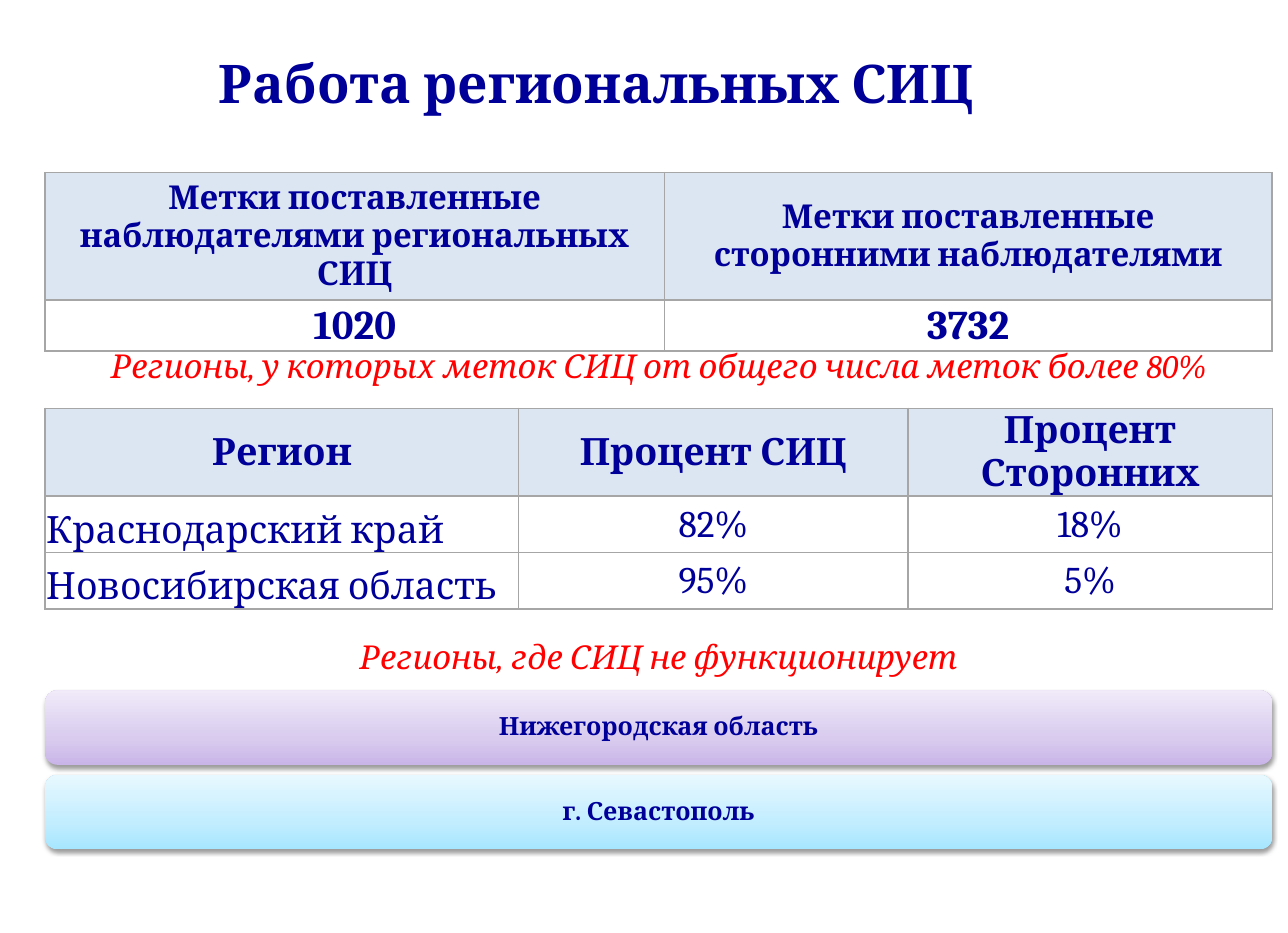
from lxml import etree
from pptx import Presentation
from pptx import util as u
from pptx.dml.color import RGBColor
from pptx.enum import shapes, text
from pptx.oxml import parse_xml
from pptx.oxml.ns import qn

COLORS = {"navy": "000099", "red": "FF0000", "header": "DCE6F2", "border": "A6A6A6"}
NS = 'xmlns:a="http://schemas.openxmlformats.org/drawingml/2006/main"'
LEFT, WIDTH = 0.4, 10.88
CENTER, MIDDLE = text.PP_ALIGN.CENTER, text.MSO_ANCHOR.MIDDLE


def add_text(tf, content, size, color="navy", bold=False, italic=False, align=CENTER):
    p = tf.paragraphs[0]
    p.alignment = align
    r = p.add_run()
    r.text = content
    r.font.size = u.Pt(size)
    r.font.name = "Cambria"
    r.font.bold = bold
    r.font.italic = italic
    r.font.color.rgb = RGBColor.from_string(COLORS[color])
    return r


def add_shadow(effects, blur, dist, angle, alpha):
    """Append an outer black shadow; blur and dist in points, angle in degrees."""
    effects.append(parse_xml(
        f'<a:outerShdw {NS} blurRad="{u.Pt(blur)}" dist="{u.Pt(dist)}" '
        f'dir="{angle * 60000}" algn="tl" rotWithShape="0"><a:srgbClr val="000000">'
        f'<a:alpha val="{alpha * 1000}"/></a:srgbClr></a:outerShdw>'))


prs = Presentation()
prs.slide_width, prs.slide_height = u.Inches(11.42), u.Inches(8.27)
slide = prs.slides.add_slide(prs.slide_layouts[5])

# Title
title = slide.shapes.title
title.left, title.top = u.Inches(1.84), u.Inches(0.4)
title.width, title.height = u.Inches(8.91), u.Inches(0.66)
title.text_frame.auto_size = text.MSO_AUTO_SIZE.NONE
title.text_frame.vertical_anchor = MIDDLE
r = add_text(title.text_frame, "Работа региональных СИЦ", 34, bold=True,
             align=text.PP_ALIGN.LEFT)
effects = etree.Element(qn("a:effectLst"))
add_shadow(effects, 3, 3, 45, 43)
r.font._element.find(qn("a:solidFill")).addnext(effects)

# Tables: top, column widths, row heights, header size, body size, header inset, rows
tables = [
    (1.53, [5.49, 5.39], [0.81, 0.45], 21, 26, (0.11, 0.06), [
        ["Метки поставленные наблюдателями региональных СИЦ",
         "Метки поставленные сторонними наблюдателями"],
        ["1020", "3732"]]),
    (3.62, [4.2, 3.45, 3.23], [0.75, 0.5, 0.5], 24, 24, (0.01, 0.01), [
        ["Регион", "Процент СИЦ", "Процент Сторонних"],
        ["Краснодарский край", "82%", "18%"],
        ["Новосибирская область", "95%", "5%"]]),
]
for top, widths, heights, head_size, body_size, head_inset, rows in tables:
    table = slide.shapes.add_table(
        len(rows), len(widths), u.Inches(LEFT), u.Inches(top),
        u.Inches(WIDTH), u.Inches(sum(heights))).table
    table.horz_banding = False
    for column, width in zip(table.columns, widths):
        column.width = u.Inches(width)
    for i, (row, values) in enumerate(zip(table.rows, rows)):
        row.height = u.Inches(heights[i])
        for j, value in enumerate(values):
            cell = row.cells[j]
            head = i == 0
            region = not head and j == 0 and len(widths) == 3
            inset_x, inset_y = head_inset if head else (0.01, 0.01)
            cell.margin_left = cell.margin_right = u.Inches(inset_x)
            cell.margin_top = u.Inches(inset_y)
            cell.margin_bottom = u.Inches(inset_y if inset_y > 0.01 else 0)
            cell.vertical_anchor = text.MSO_ANCHOR.BOTTOM if region else MIDDLE
            add_text(cell.text_frame, value, head_size if head else body_size,
                     bold=head or len(widths) == 2,
                     align=text.PP_ALIGN.LEFT if region else CENTER)
            if head:
                cell.fill.solid()
                cell.fill.fore_color.rgb = RGBColor.from_string(COLORS["header"])
            else:
                cell.fill.background()
            tcPr = cell._tc.get_or_add_tcPr()
            for k, side in enumerate(("lnL", "lnR", "lnT", "lnB")):
                tcPr.insert(k, parse_xml(
                    f'<a:{side} {NS} w="{u.Pt(1)}"><a:solidFill>'
                    f'<a:srgbClr val="{COLORS["border"]}"/></a:solidFill></a:{side}>'))

# Red captions
for top, caption in [
        (3, "Регионы, у которых меток СИЦ от общего числа меток более 80%"),
        (5.58, "Регионы, где СИЦ не функционирует")]:
    tf = slide.shapes.add_textbox(u.Inches(LEFT), u.Inches(top),
                                  u.Inches(WIDTH), u.Inches(0.48)).text_frame
    tf.word_wrap = True
    tf.margin_left = tf.margin_right = u.Inches(0.12)
    tf.margin_top = tf.margin_bottom = u.Inches(0.06)
    add_text(tf, caption, 21, "red", italic=True)

# Region bars, each with gradient stops from bottom to top
bars = [("Нижегородская область", ["C9B5E8", "D8CBEE", "F0EAF9"]),
        ("г. Севастополь", ["A7E6FF", "C1EDFF", "E7F8FF"])]
for i, (region, shades) in enumerate(bars):
    sp = slide.shapes.add_shape(
        shapes.MSO_SHAPE.ROUNDED_RECTANGLE, u.Inches(LEFT), u.Inches(6.12 + 0.75 * i),
        u.Inches(WIDTH), u.Inches(0.66))
    sp.line.fill.background()
    sp.shadow.inherit = False
    spPr = sp._element.spPr
    add_shadow(spPr.find(qn("a:effectLst")), 3.1, 1.6, 90, 38)
    stops = "".join(f'<a:gs pos="{pos * 1000}"><a:srgbClr val="{shade}"/></a:gs>'
                    for pos, shade in zip((0, 35, 100), shades))
    spPr.find(qn("a:prstGeom")).addnext(parse_xml(
        f'<a:gradFill {NS} rotWithShape="1"><a:gsLst>{stops}</a:gsLst>'
        f'<a:lin ang="{270 * 60000}" scaled="0"/></a:gradFill>'))
    tf = sp.text_frame
    tf.word_wrap = True
    tf.vertical_anchor = MIDDLE
    add_text(tf, region, 16, bold=True)
    tf.paragraphs[0].line_spacing = 0.9

prs.save("out.pptx")
